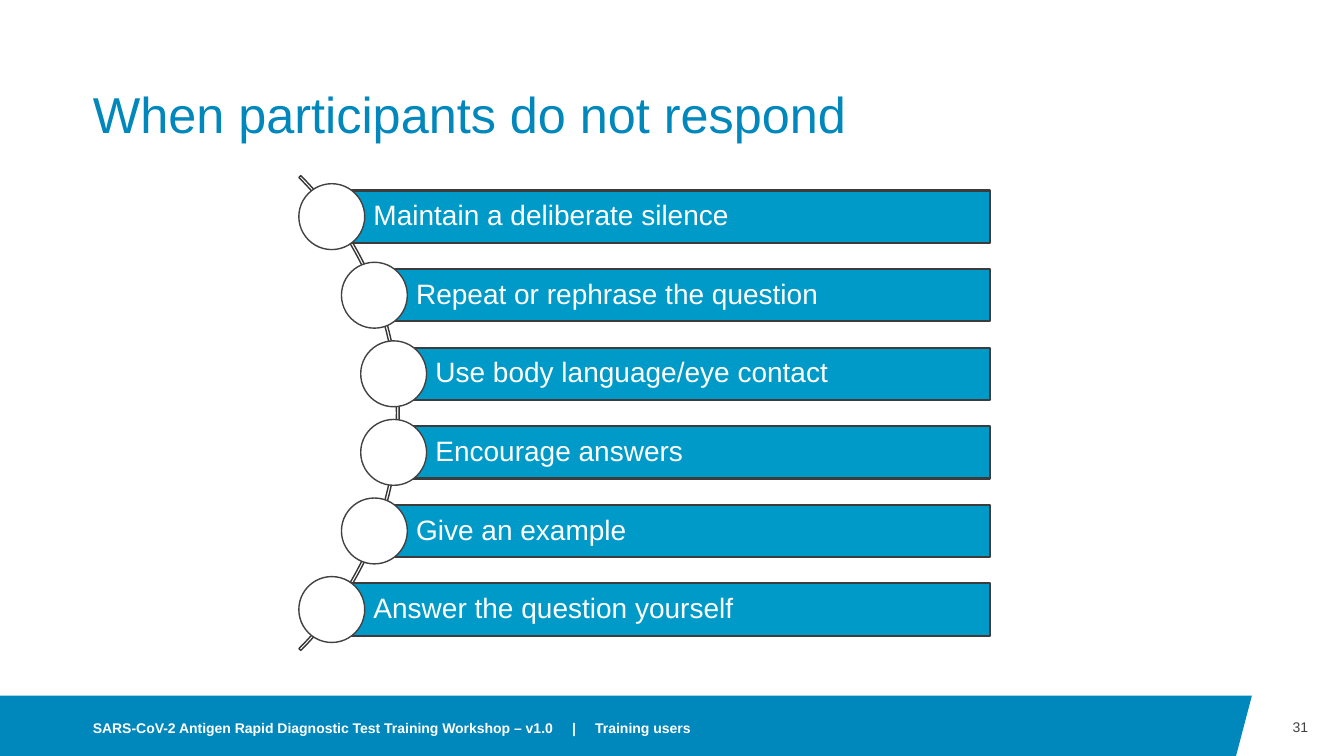
from dataclasses import dataclass
from math import sqrt

from lxml import etree
from pptx import Presentation
from pptx.dml.color import RGBColor
from pptx.enum.shapes import MSO_SHAPE
from pptx.enum.text import MSO_ANCHOR, MSO_AUTO_SIZE, PP_ALIGN
from pptx.oxml.ns import qn
from pptx.util import Cm, Pt

RECTANGLE, OVAL, BLOCK_ARC = MSO_SHAPE.RECTANGLE, MSO_SHAPE.OVAL, MSO_SHAPE.BLOCK_ARC
MIDDLE, BOTTOM = MSO_ANCHOR.MIDDLE, MSO_ANCHOR.BOTTOM
LEFT, RIGHT = PP_ALIGN.LEFT, PP_ALIGN.RIGHT
NO_FIT = MSO_AUTO_SIZE.NONE

PAGE_WIDTH, PAGE_HEIGHT = 33.87, 19.05
MARGIN = 2.34
BAND_TOP, BAND_RIGHT, BAND_SLANT = 17.53, 31.55, 0.4

ARC_X, ARC_Y, ARC_SIZE = 1.6, 10.41, 16.92
STEP_RADIUS, STEP_PITCH = 8.38, 1.98
BAR_RIGHT, BAR_HEIGHT, DOT_SIZE = 24.95, 1.32, 1.66

STEPS = [
    "Maintain a deliberate silence",
    "Repeat or rephrase the question",
    "Use body language/eye contact",
    "Encourage answers",
    "Give an example",
    "Answer the question yourself",
]


@dataclass(frozen=True)
class Theme:
    font: str = "Arial"
    brand: str = "0087BC"
    bar: str = "009AC9"
    bar_edge: str = "3C3C3C"
    arc_edge: str = "353535"
    grey: str = "424242"
    white: str = "FFFFFF"
    title_size: int = 36
    step_size: int = 20
    footer_size: int = 10


def assign(target, values):
    for name, value in values.items():
        setattr(target, name, value)


class SlideBuilder:
    def __init__(self, page, theme):
        self.page = page
        self.theme = theme

    def paint(self, shape, fill=None, edge=None, weight=1):
        shape.shadow.inherit = False
        for part, color in ((shape.fill, fill), (shape.line.fill, edge)):
            if color:
                part.solid()
                part.fore_color.rgb = RGBColor.from_string(color)
            else:
                part.background()
        if edge:
            shape.line.width = Pt(weight)
        return shape

    def set_text(self, shape, text, size, color, bold=False, align=LEFT,
                 anchor=MIDDLE, insets=(0, 0, 0, 0), spacing=1.0):
        frame = shape.text_frame
        left, top, right, bottom = (Cm(inset) for inset in insets)
        assign(frame, {
            "word_wrap": True, "auto_size": NO_FIT, "vertical_anchor": anchor,
            "margin_left": left, "margin_top": top,
            "margin_right": right, "margin_bottom": bottom,
        })
        para = frame.paragraphs[0]
        assign(para, {"alignment": align, "line_spacing": spacing})
        span = para.add_run()
        span.text = text
        assign(span.font, {"name": self.theme.font, "size": Pt(size), "bold": bold})
        span.font.color.rgb = RGBColor.from_string(color)
        return para

    def title(self, text, left, top, width, height):
        box = self.page.shapes.title
        assign(box, {"left": Cm(left), "top": Cm(top),
                     "width": Cm(width), "height": Cm(height)})
        self.set_text(box, text, self.theme.title_size, self.theme.brand,
                      anchor=BOTTOM, spacing=0.9)

    def label(self, text, left, top, width, height, tabs=(), **style):
        box = self.page.shapes.add_textbox(Cm(left), Cm(top), Cm(width), Cm(height))
        para = self.set_text(box, text, self.theme.footer_size, **style)
        if tabs:
            tab_list = etree.SubElement(para._p.get_or_add_pPr(), qn("a:tabLst"))
            for stop in tabs:
                etree.SubElement(tab_list, qn("a:tab"), pos=str(Cm(stop)), algn="l")

    def shape(self, kind, left, top, width, height, **style):
        box = self.page.shapes.add_shape(kind, Cm(left), Cm(top), Cm(width), Cm(height))
        return self.paint(box, **style)

    def band(self):
        outline = self.page.shapes.build_freeform(0, Cm(BAND_TOP))
        outline.add_line_segments([
            (Cm(BAND_RIGHT), Cm(BAND_TOP)),
            (Cm(BAND_RIGHT - BAND_SLANT), Cm(PAGE_HEIGHT)),
            (0, Cm(PAGE_HEIGHT)),
        ], close=True)
        self.paint(outline.convert_to_shape(), fill=self.theme.brand)

    def arc(self):
        half = ARC_SIZE / 2
        arc = self.shape(BLOCK_ARC, ARC_X - half, ARC_Y - half, ARC_SIZE, ARC_SIZE,
                         edge=self.theme.arc_edge)
        for index, value in enumerate((189, 27, 0.004)):
            arc.adjustments[index] = value

    def step(self, text, offset):
        x = ARC_X + sqrt(STEP_RADIUS ** 2 - offset ** 2)
        y = ARC_Y + offset
        bar = self.shape(RECTANGLE, x, y - BAR_HEIGHT / 2, BAR_RIGHT - x, BAR_HEIGHT,
                         fill=self.theme.bar, edge=self.theme.bar_edge, weight=1.5)
        self.set_text(bar, text, self.theme.step_size, self.theme.white,
                      insets=(1.05, 0.15, 0.15, 0.15), spacing=0.9)
        self.shape(OVAL, x - DOT_SIZE / 2, y - DOT_SIZE / 2, DOT_SIZE, DOT_SIZE,
                   fill=self.theme.white, edge=self.theme.grey)


def main():
    deck = Presentation()
    assign(deck, {"slide_width": Cm(PAGE_WIDTH), "slide_height": Cm(PAGE_HEIGHT)})
    theme = Theme()
    builder = SlideBuilder(deck.slides.add_slide(deck.slide_layouts[5]), theme)

    builder.band()
    builder.title("When participants do not respond", MARGIN, 1.02, 29.21, 2.62)
    builder.arc()
    for index, text in enumerate(STEPS):
        builder.step(text, (index - (len(STEPS) - 1) / 2) * STEP_PITCH)
    builder.label(
        "SARS-CoV-2 Antigen Rapid Diagnostic Test Training Workshop – v1.0\t|\tTraining users",
        MARGIN, 17.65, 20.32, 1.4, tabs=(12.08, 12.66), color=theme.white, bold=True)
    builder.label("31", BAND_RIGHT, BAND_TOP, 1.42, 1.6, color=theme.grey, align=RIGHT)

    deck.save("out.pptx")


if __name__ == "__main__":
    main()
